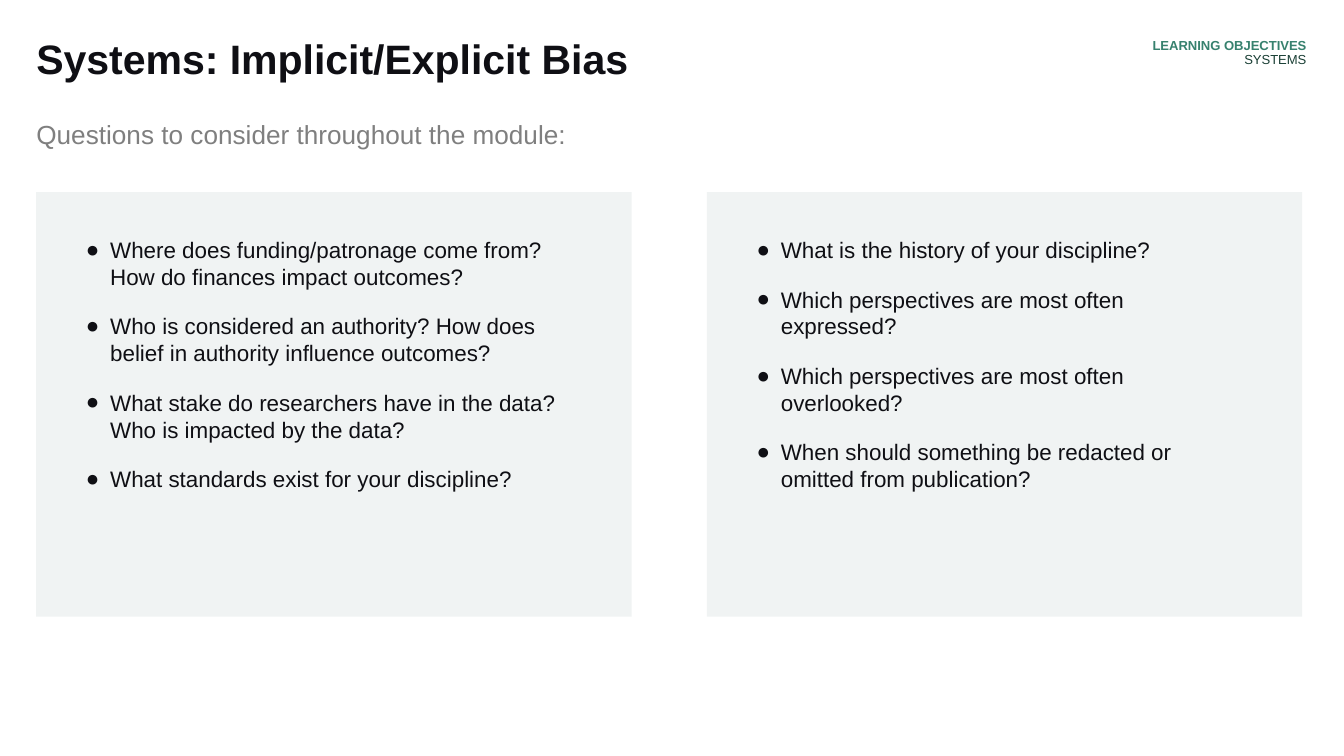
"""Builds the slide of questions on implicit and explicit bias."""
from lxml.etree import SubElement
from pptx import Presentation
from pptx.dml.color import RGBColor
from pptx.enum.shapes import MSO_SHAPE
from pptx.enum.text import PP_ALIGN
from pptx.oxml.ns import qn
from pptx.util import Inches, Pt

INK = RGBColor(0x0F, 0x0F, 0x14)
GRAY = RGBColor(0x7F, 0x7F, 0x7F)
GREEN = RGBColor(0x37, 0x81, 0x6E)
DARK_GREEN = RGBColor(0x1B, 0x40, 0x36)
PANEL = RGBColor(0xF0, 0xF3, 0xF3)

MARGIN = 0.27
PANEL_WIDTH = 4.43
COLUMN_STEP = 4.99
COLUMNS = [
    (3.8, [
        "Where does funding/patronage come from? How do finances impact outcomes?",
        "Who is considered an authority? How does belief in authority influence outcomes?",
        "What stake do researchers have in the data? Who is impacted by the data?",
        "What standards exist for your discipline?",
    ]),
    (3.72, [
        "What is the history of your discipline?",
        "Which perspectives are most often expressed?",
        "Which perspectives are most often overlooked?",
        "When should something be redacted or omitted from publication?",
    ]),
]


def add_text_frame(left, top, width, height, inset_top=0, inset_right=0.1):
    box = s.shapes.add_textbox(Inches(left), Inches(top), Inches(width), Inches(height))
    tf = box.text_frame
    tf.word_wrap = True
    tf.margin_left = 0
    tf.margin_top = Inches(inset_top)
    tf.margin_right = Inches(inset_right)
    tf.margin_bottom = Inches(0.1)
    return tf


def add_run(p, text, size, color, bold=False):
    r = p.add_run()
    r.text = text
    r.font.name = "Arial"
    r.font.size = Pt(size)
    r.font.bold = bold
    r.font.color.rgb = color


prs = Presentation()
prs.slide_width = Inches(10)
prs.slide_height = prs.slide_width * 9 // 16
s = prs.slides.add_slide(prs.slide_layouts[6])

p = add_text_frame(MARGIN, 0.29, 7.99, 0.59).paragraphs[0]
p.line_spacing = 0.9
add_run(p, "Systems: Implicit/Explicit Bias", 22, INK, True)

p = add_text_frame(MARGIN, 0.88, 7.09, 0.47).paragraphs[0]
add_run(p, "Questions to consider throughout the module:", 14, GRAY)

for column, (text_width, questions) in enumerate(COLUMNS):
    left = MARGIN + column * COLUMN_STEP
    sp = s.shapes.add_shape(MSO_SHAPE.RECTANGLE, Inches(left), Inches(1.43),
                            Inches(PANEL_WIDTH), Inches(3.16))
    sp.shadow.inherit = False
    sp.fill.solid()
    sp.fill.fore_color.rgb = PANEL
    sp.line.fill.background()

    tf = add_text_frame(left + 0.35, 1.66, text_width, 2.56, inset_top=0.1)
    for row, question in enumerate(questions):
        p = tf.add_paragraph() if row else tf.paragraphs[0]
        pPr = p._p.get_or_add_pPr()
        pPr.set("marL", str(Inches(0.2)))
        pPr.set("indent", str(Inches(-0.18)))
        bullet_color = SubElement(pPr, qn("a:buClr"))
        SubElement(bullet_color, qn("a:srgbClr"), val=str(INK))
        SubElement(pPr, qn("a:buFont"), typeface="Arial")
        SubElement(pPr, qn("a:buChar"), char="●")
        if row:
            p.space_before = Pt(12)
        add_run(p, question, 12, INK)

p = add_text_frame(6.65, 0.29, 3.07, 0.36, inset_right=0).paragraphs[0]
p.alignment = PP_ALIGN.RIGHT
p.line_spacing = 0.9
add_run(p, "LEARNING OBJECTIVES", 7, GREEN, True)
p.add_line_break()
add_run(p, "SYSTEMS", 7, DARK_GREEN)

prs.save("out.pptx")
